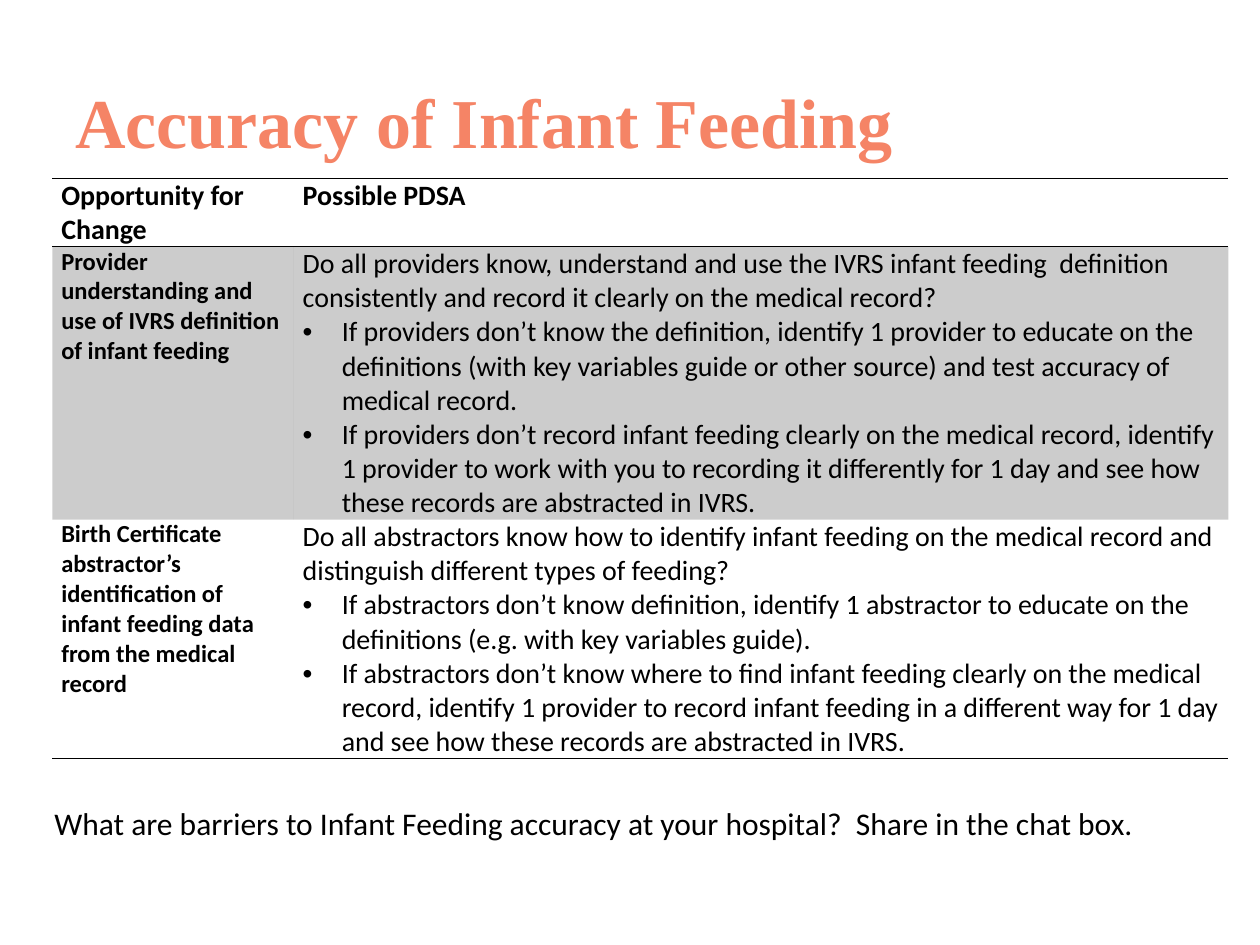
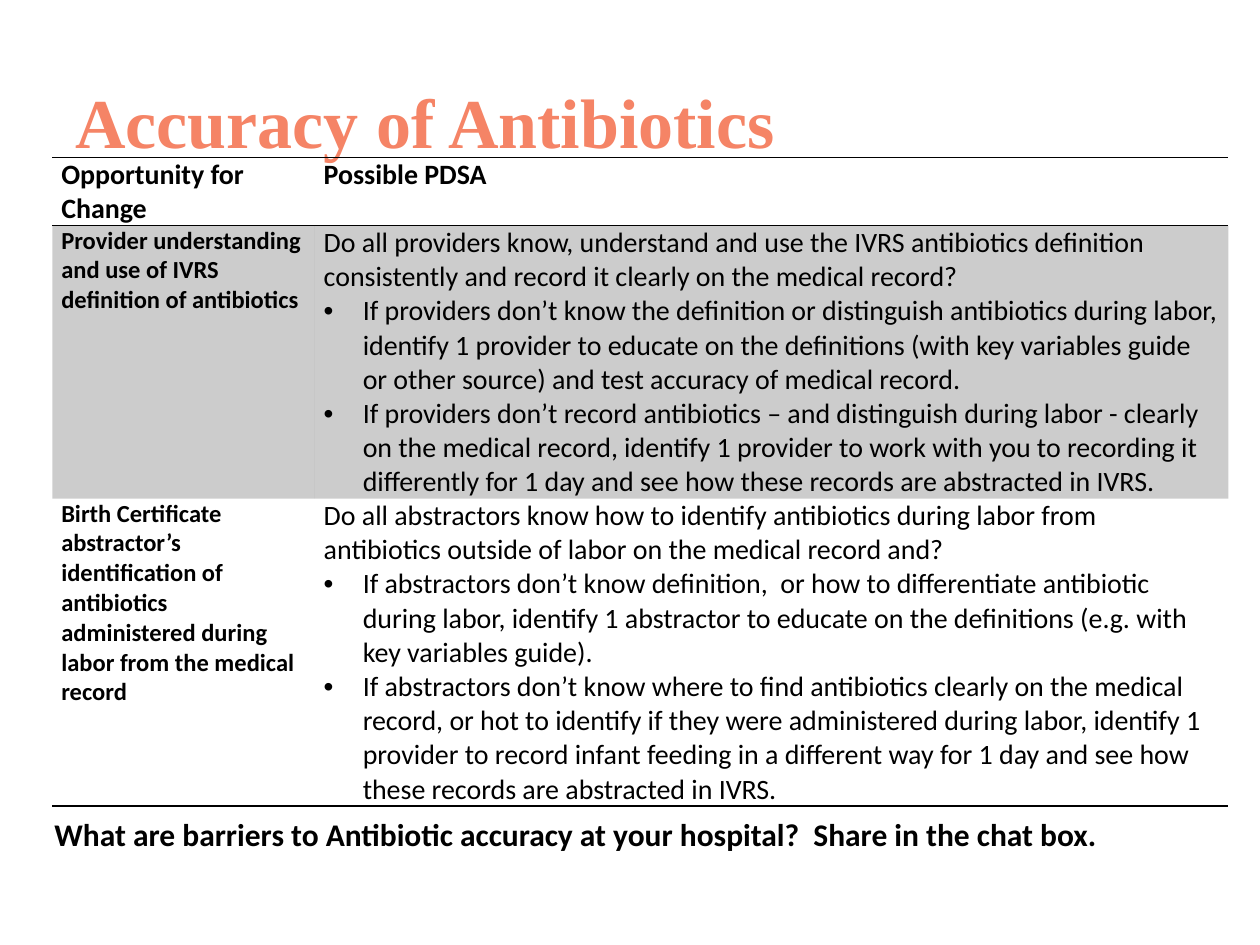
from lxml import etree
from pptx import Presentation
from pptx import util as u
from pptx.dml.color import RGBColor
from pptx.enum import text
from pptx.oxml.ns import qn

BLACK, CORAL = "000000", "F58466"
BODY_FONT, TITLE_FONT = "Calibri", "Times New Roman"
GRID_COLUMNS, GRID_ROWS = 120, 90
LINE_ROWS = 3.25  # height of one 16 pt table line
RULED_EDGES = (0, 1, 3)  # above the header, below it, below the last row


def color(value):
    return RGBColor.from_string(value)


def add_element(parent, tag, **attributes):
    return etree.SubElement(parent, qn(tag), attributes)


class Sheet:
    """Holds the deck's style and the slide being filled."""

    def __init__(self):
        self.deck = Presentation()
        self.deck.slide_width, self.deck.slide_height = u.Inches(10), u.Inches(7.5)
        self.page = None

    def new_page(self):
        self.page = self.deck.slides.add_slide(self.deck.slide_layouts[6])

    def across(self, columns):
        return round(self.deck.slide_width * columns / GRID_COLUMNS)

    def down(self, rows):
        return round(self.deck.slide_height * rows / GRID_ROWS)

    def style(self, paragraph, size, bold, font=BODY_FONT, ink=BLACK):
        paragraph.font.size = u.Pt(size)
        paragraph.font.bold = bold
        paragraph.font.name = font
        paragraph.font.color.rgb = color(ink)

    def text_box(self, words, left, top, width, height, anchor, **style):
        box = self.page.shapes.add_textbox(
            self.across(left), self.down(top), self.across(width), self.down(height))
        frame = box.text_frame
        frame.word_wrap = True
        frame.vertical_anchor = anchor
        frame.text = words
        self.style(frame.paragraphs[0], **style)

    def title(self, words):
        self.text_box(words, 6, 4, 108, 15, text.MSO_ANCHOR.MIDDLE,
                      size=40, bold=True, font=TITLE_FONT, ink=CORAL)

    def question(self, words, top, bold):
        self.text_box(words, 4, top, 110, 5, text.MSO_ANCHOR.TOP, size=18, bold=bold)

    def table(self, rows, top, label_width, heights):
        """Each row is a label and a list: a lead paragraph, then bullets."""
        table = self.page.shapes.add_table(
            len(rows), 2, self.across(5), self.down(top),
            self.across(112), self.down(sum(heights))).table
        table.first_row = table.horz_banding = False
        for column, width in zip(table.columns, (label_width, 112 - label_width)):
            column.width = self.across(width)
        for index, ((label, details), height) in enumerate(zip(rows, heights)):
            table.rows[index].height = self.down(height)
            header = index == 0
            self.cell(table.cell(index, 0), [label], 16 if header else 14, True, index)
            self.cell(table.cell(index, 1), details, 16, header, index)

    def cell(self, cell, paragraphs, size, bold, row):
        cell.margin_left = cell.margin_right = u.Inches(0.07)
        cell.margin_top = cell.margin_bottom = 0
        cell.text = "\n".join(paragraphs)
        for index, paragraph in enumerate(cell.text_frame.paragraphs):
            self.style(paragraph, size, bold)
            if index:
                self.bullet(paragraph)
        self.borders(cell, row)
        if row == 1:
            self.shade(cell)
        else:
            cell.fill.background()

    def bullet(self, paragraph):
        properties = paragraph._p.get_or_add_pPr()
        indent = u.Inches(0.31)
        properties.set("marL", str(indent))
        properties.set("indent", str(-indent))
        marks = [etree.Element(qn("a:buFont"), typeface="Arial"),
                 etree.Element(qn("a:buChar"), char="•")]
        for position, mark in enumerate(marks):
            properties.insert(position, mark)

    def borders(self, cell, row):
        properties = cell._tc.get_or_add_tcPr()
        ruled = {"a:lnL": False, "a:lnR": False,
                 "a:lnT": row in RULED_EDGES, "a:lnB": row + 1 in RULED_EDGES}
        for tag, visible in ruled.items():
            line = add_element(properties, tag, w=str(u.Pt(1)))
            if visible:
                add_element(add_element(line, "a:solidFill"), "a:srgbClr", val=BLACK)
            else:
                add_element(line, "a:noFill")

    def shade(self, cell):
        """Fill a cell with black at 20 % opacity."""
        cell.fill.solid()
        cell.fill.fore_color.rgb = color(BLACK)
        tint = cell._tc.tcPr.find(qn("a:solidFill")).find(qn("a:srgbClr"))
        add_element(tint, "a:alpha", val="20000")


HEADER = ("Opportunity for Change", ["Possible PDSA"])

TOPICS = [
    dict(
        title="Accuracy of Infant Feeding",
        top=17, label_width=23, last_lines=7,
        rows=[
            ("Provider understanding and use of IVRS definition of infant feeding", [
                "Do all providers know, understand and use the IVRS infant feeding  definition "
                "consistently and record it clearly on the medical record?",
                "If providers don’t know the definition, identify 1 provider to educate on the "
                "definitions (with key variables guide or other source) and test accuracy of "
                "medical record.",
                "If providers don’t record infant feeding clearly on the medical record, identify "
                "1 provider to work with you to recording it differently for 1 day and see how "
                "these records are abstracted in IVRS."]),
            ("Birth Certificate abstractor’s identification of infant feeding data from the "
             "medical record", [
                "Do all abstractors know how to identify infant feeding on the medical record and "
                "distinguish different types of feeding?",
                "If abstractors don’t know definition, identify 1 abstractor to educate on the "
                "definitions (e.g. with key variables guide).",
                "If abstractors don’t know where to find infant feeding clearly on the medical "
                "record, identify 1 provider to record infant feeding in a different way for 1 "
                "day and see how these records are abstracted in IVRS."]),
        ],
        question="What are barriers to Infant Feeding accuracy at your hospital?  "
                 "Share in the chat box.",
        question_top=76, question_bold=False),
    dict(
        title="Accuracy of Antibiotics",
        top=15, label_width=25, last_lines=9,
        rows=[
            ("Provider understanding and use of IVRS definition of antibiotics", [
                "Do all providers know, understand and use the IVRS antibiotics definition "
                "consistently and record it clearly on the medical record?",
                "If providers don’t know the definition or distinguish antibiotics during labor, "
                "identify 1 provider to educate on the definitions (with key variables guide "
                "or other source) and test accuracy of medical record.",
                "If providers don’t record antibiotics – and distinguish during labor - clearly "
                "on the medical record, identify 1 provider to work with you to recording it "
                "differently for 1 day and see how these records are abstracted in IVRS."]),
            ("Birth Certificate abstractor’s identification of antibiotics administered during "
             "labor from the medical record", [
                "Do all abstractors know how to identify antibiotics during labor from "
                "antibiotics outside of labor on the medical record and?",
                "If abstractors don’t know definition,  or how to differentiate antibiotic "
                "during labor, identify 1 abstractor to educate on the definitions (e.g. with "
                "key variables guide).",
                "If abstractors don’t know where to find antibiotics clearly on the medical "
                "record, or hot to identify if they were administered during labor, identify 1 "
                "provider to record infant feeding in a different way for 1 day and see how "
                "these records are abstracted in IVRS."]),
        ],
        question="What are barriers to Antibiotic accuracy at your hospital?  "
                 "Share in the chat box.",
        question_top=77, question_bold=True),
]


def main():
    sheet = Sheet()
    for topic in TOPICS:
        sheet.new_page()
        sheet.title(topic["title"])
        heights = [lines * LINE_ROWS for lines in (2, 8, topic["last_lines"])]
        sheet.table([HEADER, *topic["rows"]], topic["top"], topic["label_width"], heights)
        sheet.question(topic["question"], topic["question_top"], topic["question_bold"])
    sheet.deck.save("out.pptx")


if __name__ == "__main__":
    main()
